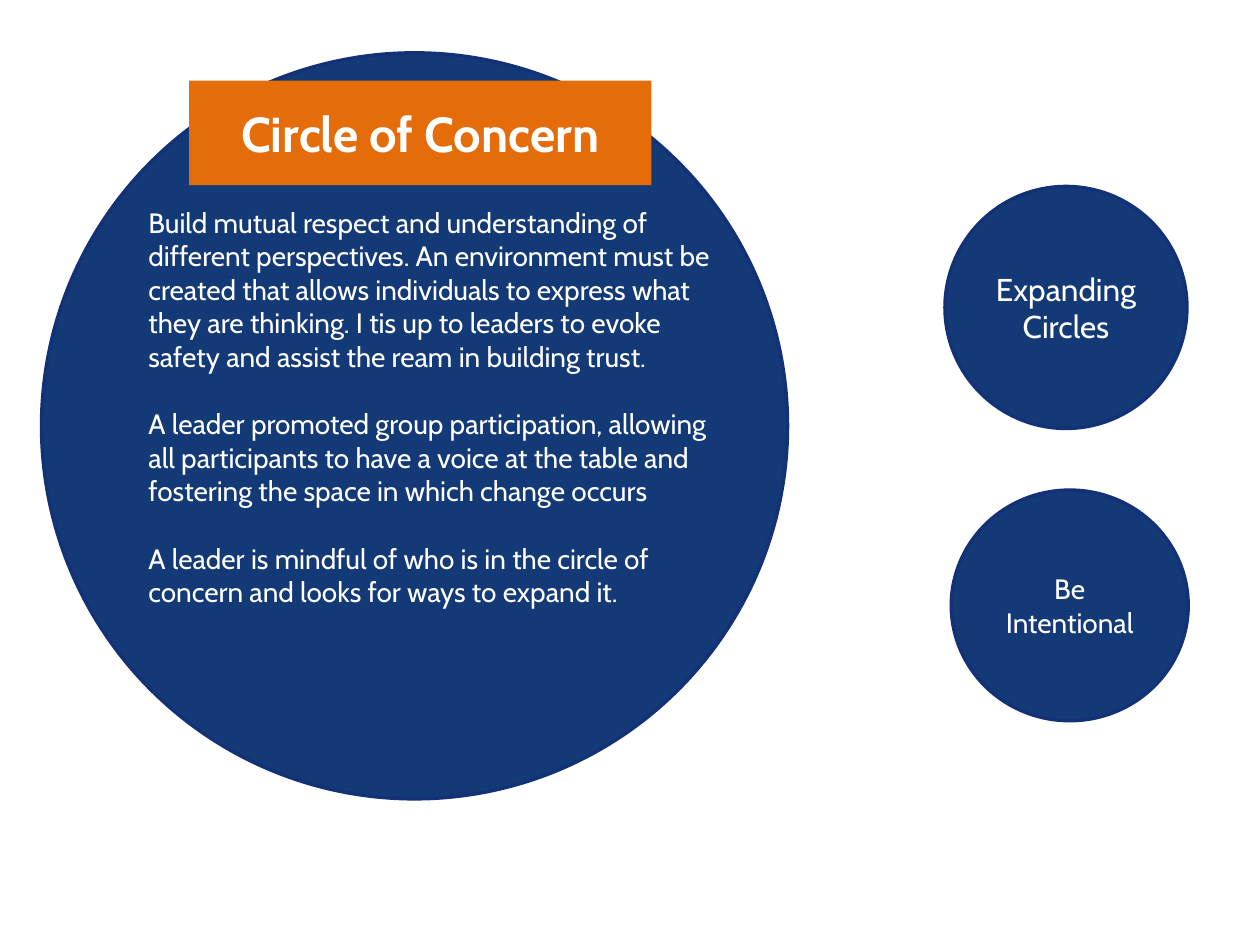
from dataclasses import dataclass

from pptx import Presentation
from pptx import util as u
from pptx.dml.color import RGBColor
from pptx.enum import shapes, text

COLORS = {"circle": "133977", "outline": "133177", "banner": "E46C0A", "text": "FFFFFF"}
FONT = "Cabin"
BODY = [
    "Build mutual respect and understanding of different perspectives. "
    "An environment must be created that allows individuals to express what "
    "they are thinking. I tis up to leaders to evoke safety and assist the "
    "ream in building trust.",
    "A leader promoted group participation, allowing all participants to have "
    "a voice at the table and fostering the space in which change occurs",
    "A leader is mindful of who is in the circle of concern and looks for ways "
    "to expand it.",
]


@dataclass
class Circle:
    left: float
    top: float
    width: float
    height: float
    label: str = ""
    size: int = 16


CIRCLES = [
    Circle(0.33, 0.42, 5.92, 5.92),
    Circle(7.55, 3.89, 1.88, 1.83, "Be Intentional"),
    Circle(7.5, 1.48, 1.92, 1.92, "Expanding Circles", 18),
]


def color(name: str) -> RGBColor:
    return RGBColor.from_string(COLORS[name])


def write(frame, lines: list[str], size: int, align, anchor, bold: bool = False) -> None:
    frame.word_wrap = True
    frame.vertical_anchor = anchor
    font_format = {"name": FONT, "size": u.Pt(size), "bold": bold}
    for index, line in enumerate(lines):
        para = frame.add_paragraph() if index else frame.paragraphs[0]
        para.alignment = align
        para.space_before = u.Pt(1.2 * size if index else 0)
        span = para.add_run()
        span.text = line
        for key, value in font_format.items():
            setattr(span.font, key, value)
        span.font.color.rgb = color("text")


def draw_circle(page, circle: Circle) -> None:
    box = page.shapes.add_shape(
        shapes.MSO_SHAPE.OVAL,
        u.Inches(circle.left),
        u.Inches(circle.top),
        u.Inches(circle.width),
        u.Inches(circle.height),
    )
    box.shadow.inherit = False
    box.fill.solid()
    box.fill.fore_color.rgb = color("circle")
    box.line.color.rgb = color("outline")
    box.line.width = u.Pt(2)
    if circle.label:
        write(box.text_frame, [circle.label], circle.size,
              text.PP_ALIGN.CENTER, text.MSO_ANCHOR.MIDDLE)


def draw_body(page) -> None:
    box = page.shapes.add_textbox(
        u.Inches(1.08), u.Inches(1.58), u.Inches(4.83), u.Inches(3.87)
    )
    write(box.text_frame, BODY, 16, text.PP_ALIGN.LEFT, text.MSO_ANCHOR.TOP)


def draw_title(page) -> None:
    title = page.shapes.title
    page.shapes._spTree.append(title._element)
    place = {"left": 1.5, "top": 0.64, "width": 3.67, "height": 0.83}
    for key, value in place.items():
        setattr(title, key, u.Inches(value))
    title.fill.solid()
    title.fill.fore_color.rgb = color("banner")
    write(title.text_frame, ["Circle of Concern"], 28,
          text.PP_ALIGN.CENTER, text.MSO_ANCHOR.MIDDLE, bold=True)


def main() -> None:
    deck = Presentation()
    deck.slide_width, deck.slide_height = u.Inches(10), u.Inches(7.5)
    page = deck.slides.add_slide(deck.slide_layouts.get_by_name("Title Only"))
    for circle in CIRCLES:
        draw_circle(page, circle)
    draw_body(page)
    draw_title(page)
    deck.save("out.pptx")


if __name__ == "__main__":
    main()
